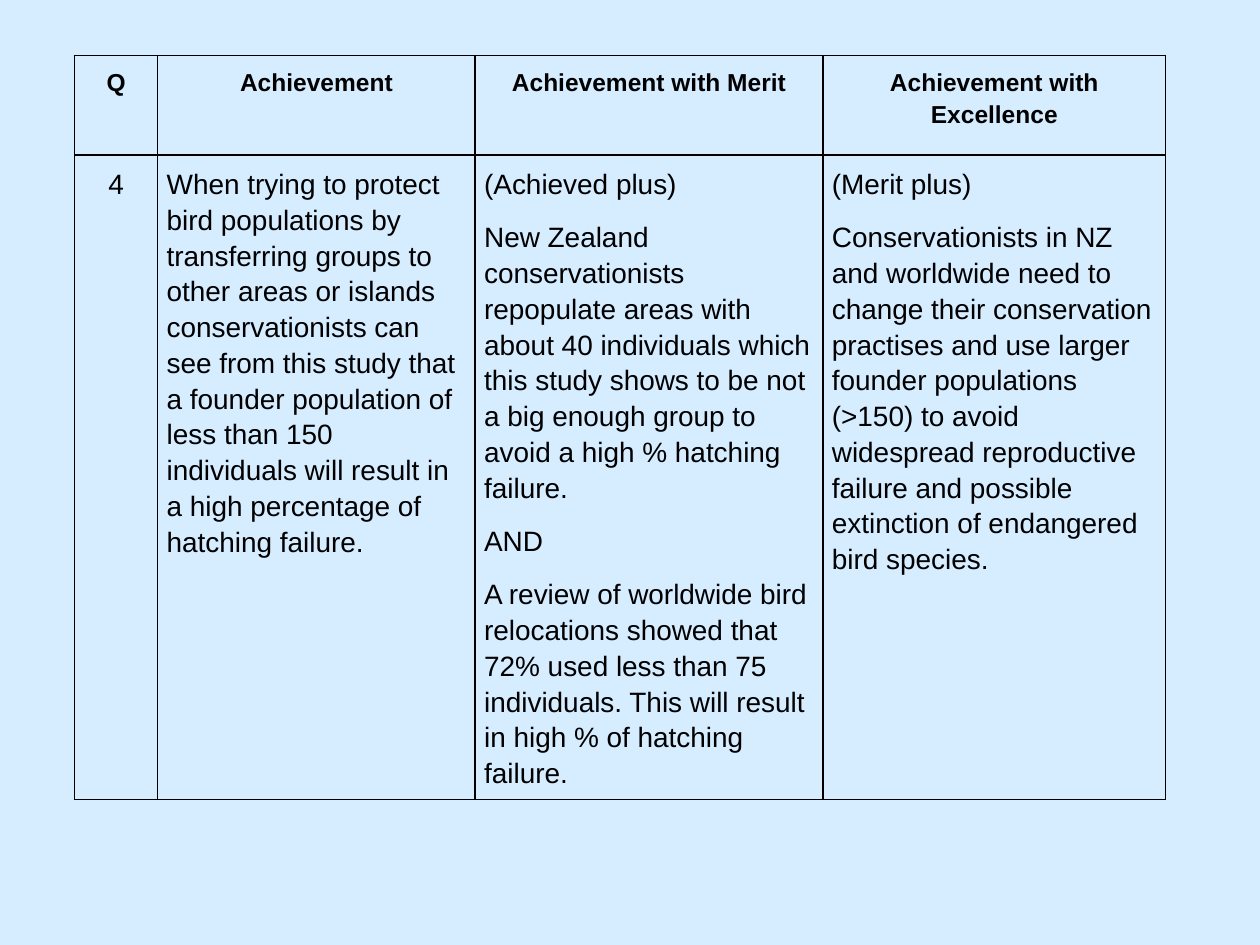
from lxml.etree import SubElement
from pptx import Presentation
from pptx.dml.color import RGBColor
from pptx.enum.text import PP_ALIGN as Align
from pptx.oxml.ns import qn
from pptx.util import Cm, Pt

COLOURS = {"background": "D6ECFF", "ink": "000000"}
COLUMN_WIDTHS = [1.68, 6.4, 7.01, 6.91]
ROW_HEIGHTS = [2, 12.24]
HEADINGS = ["Q", "Achievement", "Achievement with Merit", "Achievement with Excellence"]
ANSWERS = [
    ["4"],
    ["When trying to protect bird populations by transferring groups to other areas "
     "or islands conservationists can see from this study that a founder population "
     "of less than 150 individuals will result in a high percentage of hatching failure."],
    ["(Achieved plus)",
     "New Zealand conservationists repopulate areas with about 40 individuals which "
     "this study shows to be not a big enough group to avoid a high % hatching failure.",
     "AND",
     "A review of worldwide bird relocations showed that 72% used less than 75 "
     "individuals. This will result in high % of hatching failure."],
    ["(Merit plus)",
     "Conservationists in NZ and worldwide need to change their conservation practises "
     "and use larger founder populations (>150) to avoid widespread reproductive failure "
     "and possible extinction of endangered bird species."],
]


def colour(name):
    return RGBColor.from_string(COLOURS[name])


def add_borders(cell):
    properties = cell._tc.get_or_add_tcPr()
    for side in ("a:lnL", "a:lnR", "a:lnT", "a:lnB"):
        border = SubElement(properties, qn(side), w=str(Pt(1)))
        fill = SubElement(border, qn("a:solidFill"))
        SubElement(fill, qn("a:srgbClr"), val=COLOURS["ink"])


def fill_cell(cell, paragraphs, size, bold, align):
    add_borders(cell)
    cell.fill.background()
    cell.margin_left = cell.margin_right = Cm(0.18)
    cell.margin_top = cell.margin_bottom = Cm(0.2)
    cell.text_frame.text = "\n".join(paragraphs)
    for paragraph in cell.text_frame.paragraphs:
        paragraph.alignment = align
        paragraph.line_spacing = 1.15
        paragraph.space_after = Pt(10)
        for run in paragraph.runs:
            run.font.name = "Arial"
            run.font.size = Pt(size)
            run.font.bold = bold
            run.font.color.rgb = colour("ink")


def add_marking_schedule(slide):
    schedule = slide.shapes.add_table(
        len(ROW_HEIGHTS), len(COLUMN_WIDTHS), Cm(1.5), Cm(1.12),
        Cm(sum(COLUMN_WIDTHS)), Cm(sum(ROW_HEIGHTS))).table
    schedule.horz_banding = False
    for column, width in zip(schedule.columns, COLUMN_WIDTHS):
        column.width = Cm(width)
    for row, height in zip(schedule.rows, ROW_HEIGHTS):
        row.height = Cm(height)
    for index, (heading, answer) in enumerate(zip(HEADINGS, ANSWERS)):
        fill_cell(schedule.cell(0, index), [heading], 14, True, Align.CENTER)
        answer_align = Align.LEFT if index else Align.CENTER
        fill_cell(schedule.cell(1, index), answer, 16, False, answer_align)


def main():
    deck = Presentation()
    deck.slide_width, deck.slide_height = Cm(25.4), Cm(19.05)
    slide = deck.slides.add_slide(deck.slide_layouts[6])
    slide.background.fill.solid()
    slide.background.fill.fore_color.rgb = colour("background")
    add_marking_schedule(slide)
    deck.save("out.pptx")


if __name__ == "__main__":
    main()
